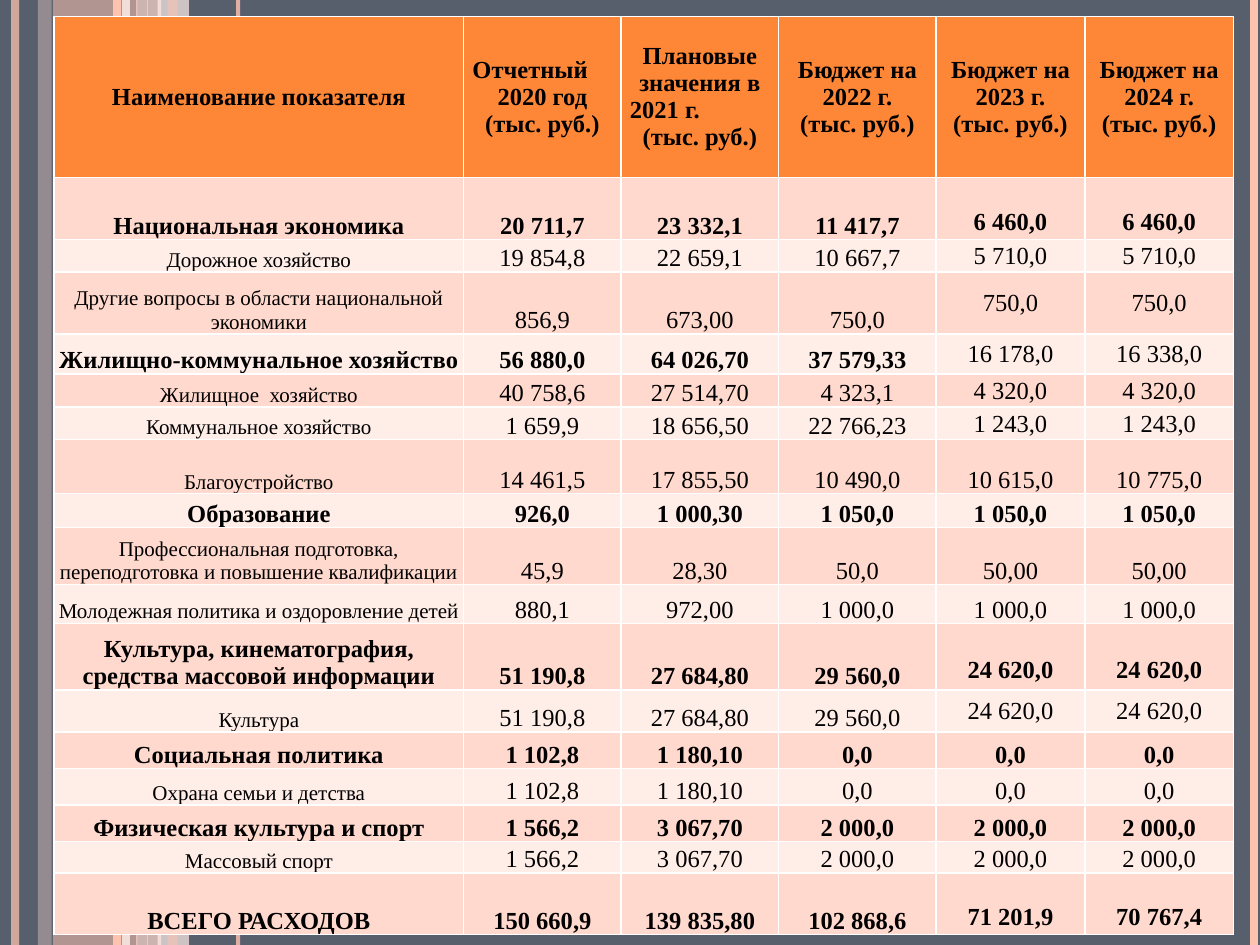
from lxml import etree
from pptx import Presentation
from pptx.dml.color import RGBColor
from pptx.enum.shapes import MSO_CONNECTOR, MSO_SHAPE
from pptx.enum.text import MSO_ANCHOR, PP_ALIGN
from pptx.oxml.ns import qn
from pptx.util import Inches, Pt

RECTANGLE, STRAIGHT = MSO_SHAPE.RECTANGLE, MSO_CONNECTOR.STRAIGHT
LEFT, CENTER = PP_ALIGN.LEFT, PP_ALIGN.CENTER
MIDDLE, BOTTOM = MSO_ANCHOR.MIDDLE, MSO_ANCHOR.BOTTOM

SLATE = RGBColor(0x57, 0x5F, 0x6D)
ORANGE = RGBColor(0xFE, 0x86, 0x37)
PEACH = RGBColor(0xFE, 0xC3, 0xAE)
BLUSH = RGBColor(0xFF, 0xD9, 0xCE)
PALE = RGBColor(0xFF, 0xED, 0xE8)
WHITE = RGBColor(0xFF, 0xFF, 0xFF)
BLACK = RGBColor(0, 0, 0)

WIDTH, HEIGHT = 10, 7.5

# Background strips: left, width, colour, opacity in percent
STRIPS = [(0.42, 0.67, PEACH, 54), (0.3, 0.11, BLUSH, 36),
          (1.08, 0.2, BLUSH, 70), (1.25, 0.25, PALE, 71)]
TOP_STRIP = (1.33, 0.08, PEACH, 51)
# Background lines: x, weight, colour, opacity in percent
RULES = [(0.12, 4.5, PEACH, 73), (1, 4.5, PALE, 83), (0.93, 4.5, PEACH, 100),
         (1.89, 2.25, PEACH, 82), (1.17, 0.75, PEACH, 100)]
RIGHT_RULE = (9.95, 4.5, PEACH, 100)

COLUMN_WIDTHS = [3.25, 1.25, 1.25, 1.25, 1.18, 1.18]
HEADER_HEIGHT = 1.28
# Each header is a list of paragraphs: text, alignment
UNIT = ("(тыс. руб.)", CENTER)
HEADERS = [
    [("Наименование показателя", CENTER)],
    [("Отчетный", LEFT), ("2020 год", CENTER), UNIT],
    [("Плановые значения в", CENTER), ("2021 г.", LEFT), UNIT],
] + [[(f"Бюджет на {year} г.", CENTER), UNIT] for year in (2022, 2023, 2024)]

# Rows: height, section (bold) or item, label, values, and the bottom inset of
# the last two values (None centres them in the cell)
SECTION, ITEM = True, False
ROWS = [
    (0.49, SECTION, "Национальная экономика",
     ["20 711,7", "23 332,1", "11 417,7", "6 460,0", "6 460,0"], 0.03),
    (0.26, ITEM, "Дорожное хозяйство",
     ["19 854,8", "22 659,1", "10 667,7", "5 710,0", "5 710,0"], None),
    (0.49, ITEM, "Другие вопросы в области национальной экономики",
     ["856,9", "673,00", "750,0", "750,0", "750,0"], None),
    (0.32, SECTION, "Жилищно-коммунальное хозяйство",
     ["56 880,0", "64 026,70", "37 579,33", "16 178,0", "16 338,0"], None),
    (0.26, ITEM, "Жилищное  хозяйство",
     ["40 758,6", "27 514,70", "4 323,1", "4 320,0", "4 320,0"], None),
    (0.26, ITEM, "Коммунальное хозяйство",
     ["1 659,9", "18 656,50", "22 766,23", "1 243,0", "1 243,0"], None),
    (0.43, ITEM, "Благоустройство",
     ["14 461,5", "17 855,50", "10 490,0", "10 615,0", "10 775,0"], 0),
    (0.27, SECTION, "Образование",
     ["926,0", "1 000,30", "1 050,0", "1 050,0", "1 050,0"], 0),
    (0.45, ITEM, "Профессиональная подготовка, переподготовка и повышение квалификации",
     ["45,9", "28,30", "50,0", "50,00", "50,00"], 0),
    (0.31, ITEM, "Молодежная политика и оздоровление детей",
     ["880,1", "972,00", "1 000,0", "1 000,0", "1 000,0"], 0),
    (0.53, SECTION, "Культура, кинематография, средства массовой информации",
     ["51 190,8", "27 684,80", "29 560,0", "24 620,0", "24 620,0"], 0.05),
    (0.33, ITEM, "Культура",
     ["51 190,8", "27 684,80", "29 560,0", "24 620,0", "24 620,0"], None),
    (0.29, SECTION, "Социальная политика",
     ["1 102,8", "1 180,10", "0,0", "0,0", "0,0"], 0),
    (0.29, ITEM, "Охрана семьи и детства",
     ["1 102,8", "1 180,10", "0,0", "0,0", "0,0"], 0),
    (0.29, SECTION, "Физическая культура и спорт",
     ["1 566,2", "3 067,70", "2 000,0", "2 000,0", "2 000,0"], 0),
    (0.25, ITEM, "Массовый спорт",
     ["1 566,2", "3 067,70", "2 000,0", "2 000,0", "2 000,0"], 0),
    (0.49, SECTION, "ВСЕГО РАСХОДОВ",
     ["150 660,9", "139 835,80", "102 868,6", "71 201,9", "70 767,4"], 0.03),
]
UNBOLD_LATE_SECTION = "Жилищно-коммунальное хозяйство"


def write(para, text, font="Times New Roman", size=14, bold=False,
          color=BLACK, align=CENTER):
    para.alignment = align
    span = para.add_run()
    span.text = text
    span.font.name, span.font.size, span.font.bold = font, Pt(size), bold
    span.font.color.rgb = color


def set_opacity(properties, percent):
    if percent < 100:
        color = next(properties.iter(qn("a:srgbClr")))
        etree.SubElement(color, qn("a:alpha"), val=str(percent * 1000))


class BudgetSlide:
    """Holds the table style and the slide being built."""
    border, border_weight = WHITE, 1
    header_fill, band_fills = ORANGE, (BLUSH, PALE)

    def __init__(self, deck):
        self.page = deck.slides.add_slide(deck.slide_layouts[6])
        fill = self.page.background.fill
        fill.solid()
        fill.fore_color.rgb = SLATE

    def strip(self, left, width, color, opacity):
        box = self.page.shapes.add_shape(
            RECTANGLE, Inches(left), 0, Inches(width), Inches(HEIGHT))
        box.shadow.inherit = False
        box.fill.solid()
        box.fill.fore_color.rgb = color
        box.line.fill.background()
        set_opacity(box.fill._xPr, opacity)

    def rule(self, x, weight, color, opacity):
        line = self.page.shapes.add_connector(
            STRAIGHT, Inches(x), 0, Inches(x), Inches(HEIGHT))
        line.line.width = Pt(weight)
        line.line.color.rgb = color
        properties = line._element.spPr
        set_opacity(properties, opacity)
        etree.SubElement(properties, qn("a:effectLst"))

    def table(self, left, top, widths, heights):
        frame = self.page.shapes.add_table(
            len(heights), len(widths), Inches(left), Inches(top),
            Inches(sum(widths)), Inches(sum(heights)))
        table = frame.table
        table.first_row = table.horz_banding = False
        for column, width in zip(table.columns, widths):
            column.width = Inches(width)
        for row, height in zip(table.rows, heights):
            row.height = Inches(height)
        return table

    def cell(self, cell, paragraphs, fill, anchor, insets, **text_format):
        properties = cell._tc.get_or_add_tcPr()
        for side in ("a:lnL", "a:lnR", "a:lnT", "a:lnB"):
            line = etree.SubElement(properties, qn(side), w=str(Pt(self.border_weight)))
            solid = etree.SubElement(line, qn("a:solidFill"))
            etree.SubElement(solid, qn("a:srgbClr"), val=str(self.border))
        cell.fill.solid()
        cell.fill.fore_color.rgb = fill
        cell.vertical_anchor = anchor
        (cell.margin_left, cell.margin_top, cell.margin_right,
         cell.margin_bottom) = map(Inches, insets)
        frame = cell.text_frame
        for index, (text, align) in enumerate(paragraphs):
            para = frame.add_paragraph() if index else frame.paragraphs[0]
            write(para, text, align=align, **text_format)

    def header(self, table):
        for column, paragraphs in enumerate(HEADERS):
            self.cell(table.cell(0, column), paragraphs, self.header_fill,
                      MIDDLE, (0.07, 0.04, 0.07, 0.04), bold=True)

    def body_row(self, table, number, section, label, values, late_inset):
        fill = self.band_fills[(number - 1) % 2]
        for column, text in enumerate([label] + values):
            late = column >= 4
            anchor = MIDDLE if late and late_inset is None else BOTTOM
            bottom = late_inset or 0 if late else 0
            bold = section and not (late and label == UNBOLD_LATE_SECTION)
            size = 12 if column == 0 and not section else 14
            self.cell(table.cell(number, column), [(text, CENTER)], fill, anchor,
                      (0.01, 0.01, 0.01, bottom), size=size, bold=bold)


def main():
    deck = Presentation()
    deck.slide_width, deck.slide_height = Inches(WIDTH), Inches(HEIGHT)
    slide = BudgetSlide(deck)

    # Striped background
    for strip in STRIPS:
        slide.strip(*strip)
    for rule in RULES:
        slide.rule(*rule)
    slide.strip(*TOP_STRIP)
    slide.rule(*RIGHT_RULE)

    # Budget table
    heights = [HEADER_HEIGHT] + [row[0] for row in ROWS]
    table = slide.table(0.43, 0.13, COLUMN_WIDTHS, heights)
    slide.header(table)
    for number, (_, *content) in enumerate(ROWS, start=1):
        slide.body_row(table, number, *content)

    deck.save("out.pptx")


if __name__ == "__main__":
    main()
